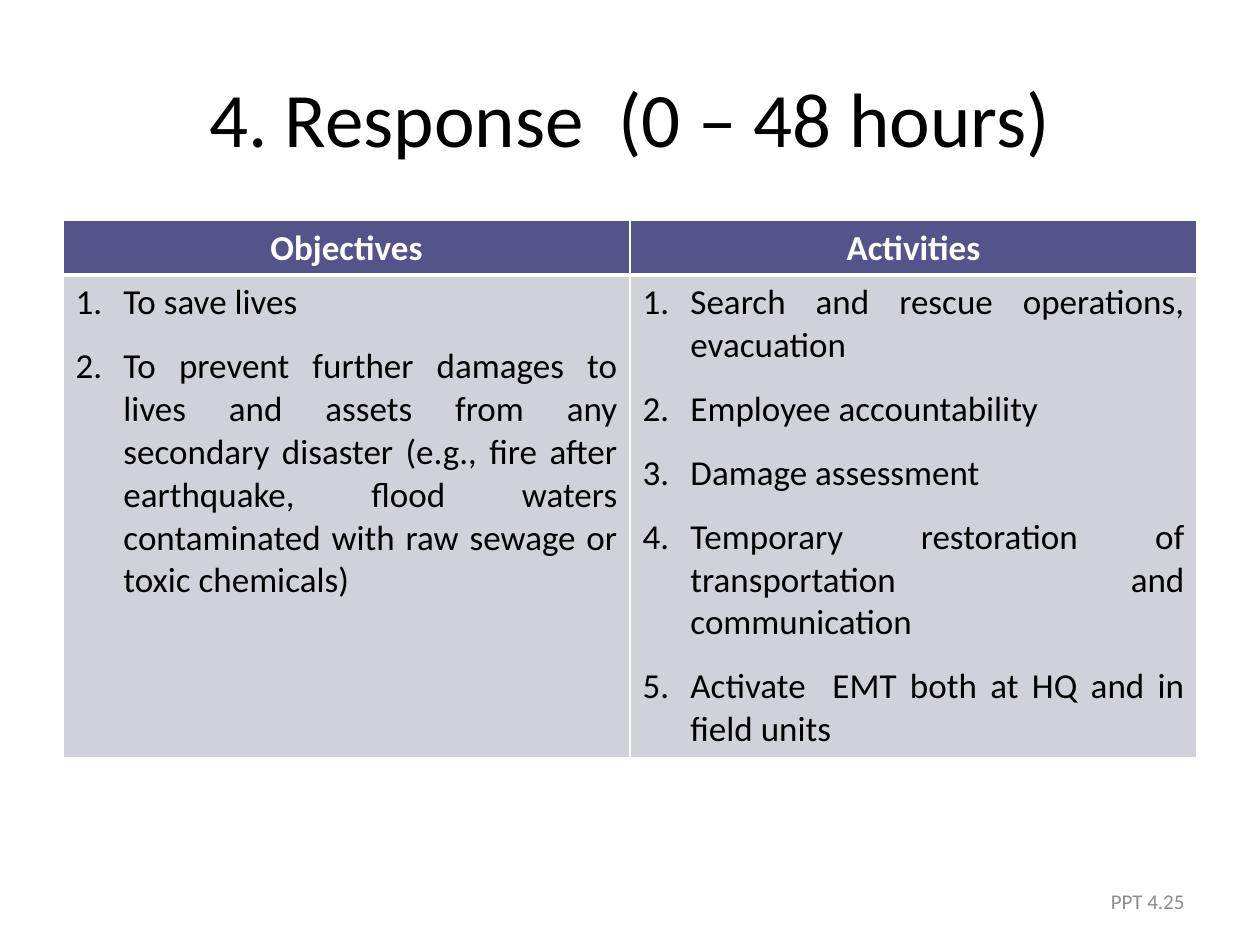
from lxml import etree
from pptx import Presentation
from pptx.dml.color import RGBColor
from pptx.enum.text import MSO_ANCHOR, PP_ALIGN
from pptx.oxml.ns import qn
from pptx.util import Inches, Pt

BLACK = RGBColor(0x00, 0x00, 0x00)
WHITE = RGBColor(0xFF, 0xFF, 0xFF)
GRAY = RGBColor(0x8C, 0x8C, 0x8C)
HEADER_FILL = RGBColor(0x53, 0x54, 0x8A)
BODY_FILL = RGBColor(0xD1, 0xD1, 0xDA)
FONT = "Calibri"
CENTER, RIGHT, JUSTIFY = PP_ALIGN.CENTER, PP_ALIGN.RIGHT, PP_ALIGN.JUSTIFY
MIDDLE = MSO_ANCHOR.MIDDLE

COLUMNS = {
    "Objectives": [
        "To save lives",
        "To prevent further damages to lives and assets from any secondary disaster "
        "(e.g., fire after earthquake, flood waters contaminated with raw sewage or "
        "toxic chemicals)",
    ],
    "Activities": [
        "Search and rescue operations, evacuation",
        "Employee accountability",
        "Damage assessment",
        "Temporary restoration of transportation and communication",
        "Activate  EMT both at HQ and in field units",
    ],
}


def write_paragraph(paragraph, text, size, color, alignment, bold=False):
    paragraph.text = text
    paragraph.alignment = alignment
    paragraph.font.name = FONT
    paragraph.font.size = Pt(size)
    paragraph.font.bold = bold
    paragraph.font.color.rgb = color


def style_cell(cell, fill_color, top_width, bottom_width):
    """Fill a cell and give it white borders, widths in points."""
    cell.fill.solid()
    cell.fill.fore_color.rgb = fill_color
    properties = cell._tc.get_or_add_tcPr()
    widths = {"a:lnL": 1, "a:lnR": 1, "a:lnT": top_width, "a:lnB": bottom_width}
    for index, (tag, width) in enumerate(widths.items()):
        line = etree.Element(qn(tag), w=str(Pt(width)))
        line_fill = etree.SubElement(line, qn("a:solidFill"))
        etree.SubElement(line_fill, qn("a:srgbClr"), val=str(WHITE))
        properties.insert(index, line)


presentation = Presentation()
presentation.slide_width = Inches(10)
presentation.slide_height = Inches(7.5)
slide = presentation.slides.add_slide(presentation.slide_layouts[6])

# Title and page label
for text, left, top, width, height, size, color, alignment in [
    ("4. Response  (0 – 48 hours)", 0.5, 0.3, 9, 1.25, 44, BLACK, CENTER),
    ("PPT 4.25", 7.17, 6.95, 2.33, 0.4, 12, GRAY, RIGHT),
]:
    text_box = slide.shapes.add_textbox(
        Inches(left), Inches(top), Inches(width), Inches(height))
    text_box.text_frame.word_wrap = True
    text_box.text_frame.vertical_anchor = MIDDLE
    write_paragraph(text_box.text_frame.paragraphs[0], text, size, color, alignment)

# Objectives and activities
table = slide.shapes.add_table(
    2, len(COLUMNS), Inches(0.5), Inches(1.75), Inches(9), Inches(4.26)).table
table.rows[0].height = Inches(0.43)
table.rows[1].height = Inches(3.83)

for column, (heading, items) in enumerate(COLUMNS.items()):
    header_cell, body_cell = table.cell(0, column), table.cell(1, column)
    style_cell(header_cell, HEADER_FILL, 1, 3)
    style_cell(body_cell, BODY_FILL, 3, 1)

    paragraph = header_cell.text_frame.paragraphs[0]
    write_paragraph(paragraph, heading, 20, WHITE, CENTER, bold=True)
    paragraph.space_after = Pt(12)

    text_frame = body_cell.text_frame
    for number, item in enumerate(items):
        paragraph = text_frame.add_paragraph() if number else text_frame.paragraphs[0]
        write_paragraph(paragraph, item, 20, BLACK, JUSTIFY)
        paragraph.space_after = Pt(12)
        properties = paragraph._p.get_or_add_pPr()
        properties.set("marL", str(Inches(0.38)))
        properties.set("indent", str(Inches(-0.38)))
        numbering = etree.Element(qn("a:buAutoNum"), type="arabicPeriod")
        properties.find(qn("a:spcAft")).addnext(numbering)

presentation.save("out.pptx")
